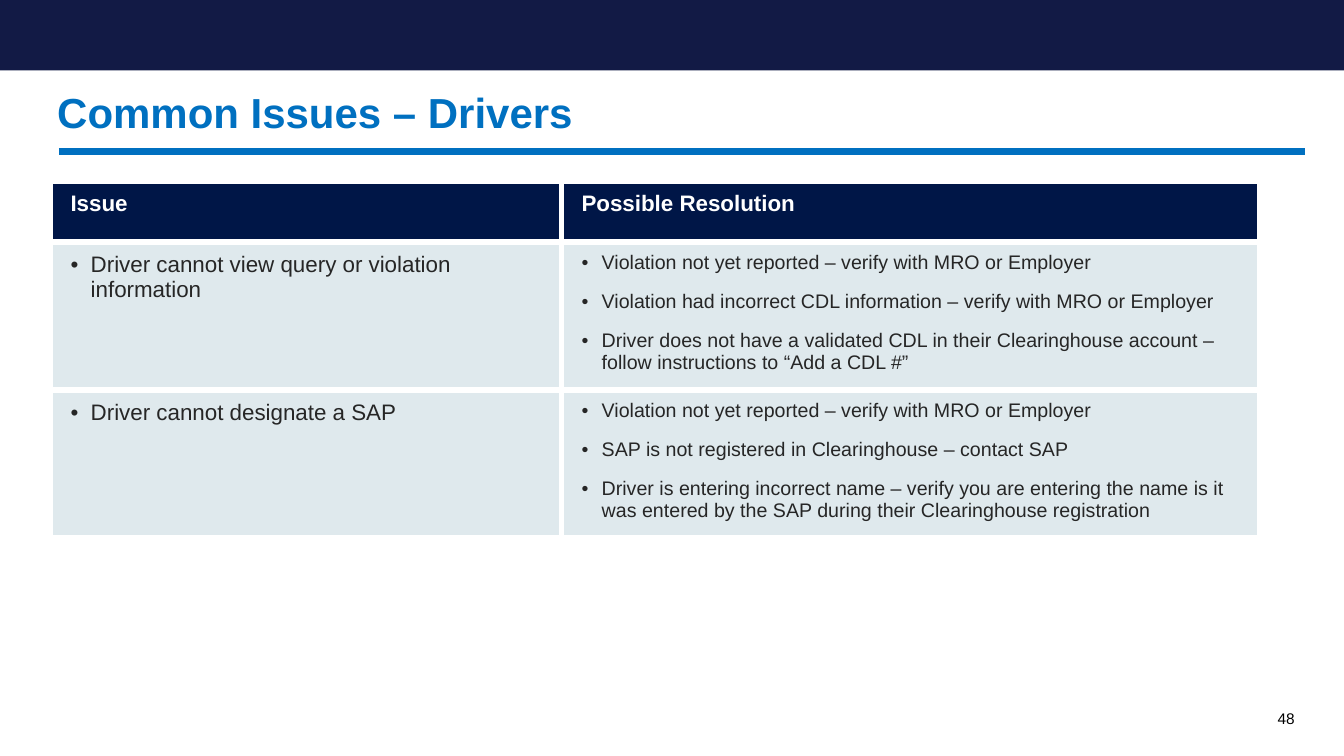
import pptx
import pptx.dml.color
import pptx.enum.shapes
import pptx.enum.text
import pptx.oxml
import pptx.oxml.ns
import pptx.util
from lxml import etree

Pt = pptx.util.Pt
ANCHOR = pptx.enum.text.MSO_ANCHOR
ALIGN = pptx.enum.text.PP_ALIGN
COLORS = {"band": "121A45", "accent": "0070C0", "header": "001647", "cell": "B3CBD4",
          "body": "262626", "white": "FFFFFF", "black": "000000"}
HEADINGS = ["Issue", "Possible Resolution"]
ISSUES = [
    ("Driver cannot view query or violation information",
     ["Violation not yet reported – verify with MRO or Employer",
      "Violation had incorrect CDL information – verify with MRO or Employer",
      "Driver does not have a validated CDL in their Clearinghouse account – "
      "follow instructions to “Add a CDL #”"]),
    ("Driver cannot designate a SAP",
     ["Violation not yet reported – verify with MRO or Employer",
      "SAP is not registered in Clearinghouse – contact SAP",
      "Driver is entering incorrect name – verify you are entering the name is it "
      "was entered by the SAP during their Clearinghouse registration"]),
]


def rgb(name):
    return pptx.dml.color.RGBColor.from_string(COLORS[name])


def add_xml(parent, tag, **attributes):
    return etree.SubElement(parent, pptx.oxml.ns.qn(tag), attributes)


def style(para, size, color, bold=False):
    para.font.name = "Arial"
    para.font.size = Pt(size)
    para.font.bold = bold
    para.font.color.rgb = rgb(color)


def add_text(page, left, top, width, height, text, size, color, anchor, align, bold=False):
    frame = page.shapes.add_textbox(Pt(left), Pt(top), Pt(width), Pt(height)).text_frame
    frame.word_wrap = True
    frame.vertical_anchor = anchor
    para = frame.paragraphs[0]
    para.text = text
    para.alignment = align
    style(para, size, color, bold)


def add_header(page, left, top, width):
    # Band across the page
    band = page.shapes.add_shape(pptx.enum.shapes.MSO_SHAPE.RECTANGLE,
                                 Pt(left), Pt(top), Pt(width), Pt(50.4))
    band.shadow.inherit = False
    band.fill.solid()
    band.fill.fore_color.rgb = rgb("band")
    band.line.fill.background()
    # Title and its rule
    add_text(page, left + 33.8, top + 62.6, 898, 39, "Common Issues – Drivers",
             30, "accent", ANCHOR.BOTTOM, ALIGN.LEFT, True)
    rule = page.shapes.add_connector(pptx.enum.shapes.MSO_CONNECTOR.STRAIGHT,
                                     Pt(left + 42), Pt(top + 108), Pt(left + 932), Pt(top + 108))
    rule.line.color.rgb = rgb("accent")
    rule.line.width = Pt(5)
    add_xml(rule._element.spPr, "a:effectLst")


def format_cell(cell, fill, alpha=None):
    cell.margin_left, cell.margin_right = Pt(14.4), Pt(21.6)
    cell.margin_top = cell.margin_bottom = Pt(7.2)
    cell.vertical_anchor = ANCHOR.TOP
    properties = cell._tc.get_or_add_tcPr()
    # Borders come before the fill
    for side in ("a:lnL", "a:lnR", "a:lnT", "a:lnB"):
        border = add_xml(properties, side, w=str(Pt(4.5)))
        add_xml(add_xml(border, "a:solidFill"), "a:srgbClr", val=COLORS["white"])
    paint = add_xml(add_xml(properties, "a:solidFill"), "a:srgbClr", val=COLORS[fill])
    if alpha:
        add_xml(paint, "a:alpha", val=str(alpha * 1000))


def fill_bullets(cell, lines, size):
    format_cell(cell, "cell", 41)
    frame = cell.text_frame
    for index, line in enumerate(lines):
        para = frame.add_paragraph() if index else frame.paragraphs[0]
        para.text = line
        properties = para._p.get_or_add_pPr()
        properties.set("marL", str(Pt(14.4)))
        properties.set("indent", str(-Pt(14.4)))
        if index:
            para.space_before = Pt(6)
        para.space_after = Pt(6)
        add_xml(properties, "a:buFont", typeface="Arial")
        add_xml(properties, "a:buChar", char="•")
        style(para, size, "body")


def add_issue_table(page, left, top, widths, heights):
    table = page.shapes.add_table(len(heights), len(widths), Pt(left), Pt(top),
                                  Pt(sum(widths)), Pt(sum(heights))).table
    table.horz_banding = False
    for column, width in zip(table.columns, widths):
        column.width = Pt(width)
    for row, height in zip(table.rows, heights):
        row.height = Pt(height)
    # Heading row
    for column, heading in enumerate(HEADINGS):
        cell = table.cell(0, column)
        format_cell(cell, "header")
        cell.text = heading
        style(cell.text_frame.paragraphs[0], 16, "white", True)
    # Issues with their resolutions
    for row, (issue, resolutions) in enumerate(ISSUES, start=1):
        fill_bullets(table.cell(row, 0), [issue], 16)
        fill_bullets(table.cell(row, 1), resolutions, 14)


def main():
    deck = pptx.Presentation()
    deck.slide_width, deck.slide_height = Pt(960), Pt(540)
    page = deck.slides.add_slide(deck.slide_layouts[6])
    add_header(page, 0, 0, 960)
    add_issue_table(page, 36, 129.6, [365, 499], [43.2, 101.5, 101.5])
    # Page number
    add_text(page, 697, 498.5, 235, 28.8, "48", 11, "black", ANCHOR.MIDDLE, ALIGN.RIGHT)
    deck.save("out.pptx")


if __name__ == "__main__":
    main()
